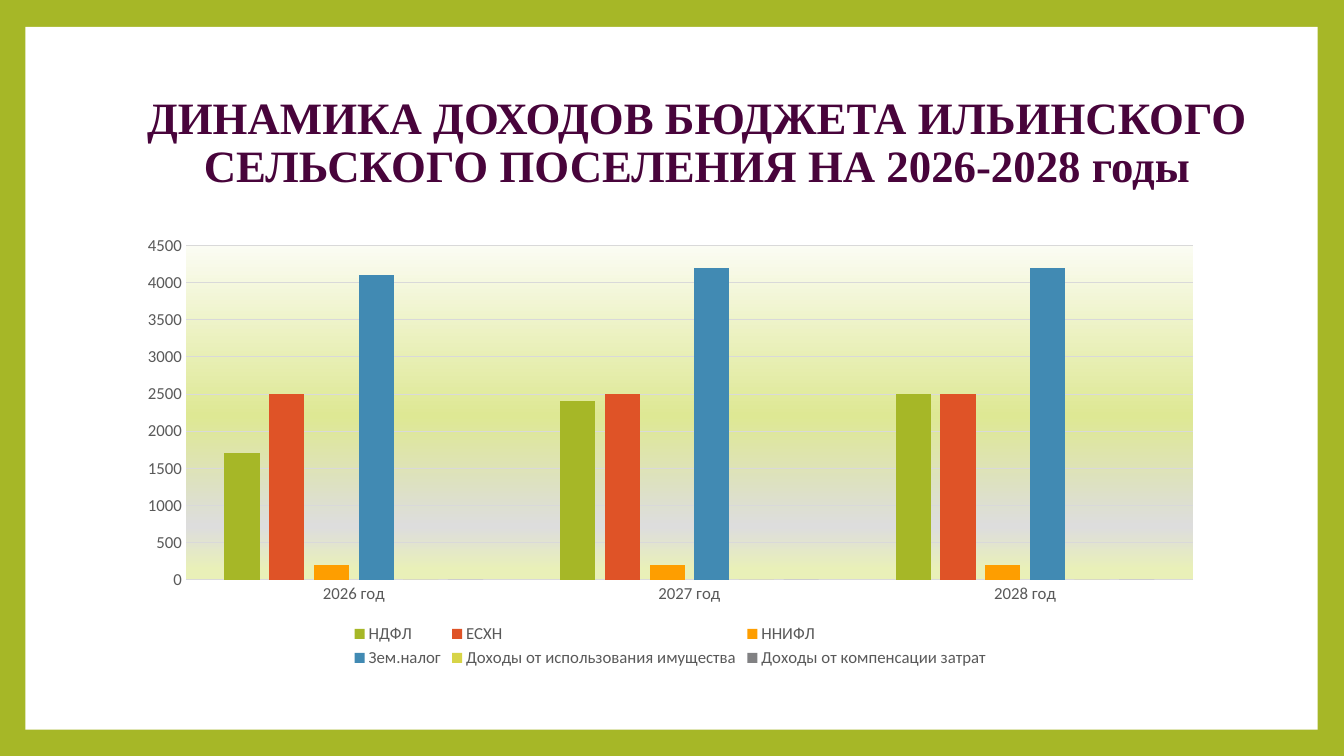
import pptx
import pptx.chart.data
import pptx.dml.color
import pptx.enum.chart
import pptx.enum.shapes
import pptx.enum.text
import pptx.oxml
import pptx.oxml.ns
import pptx.util
from pptx.util import Cm

YEARS = ["2026 год", "2027 год", "2028 год"]
INCOME = [
    ("НДФЛ", (1700, 2400, 2500), "A6B727"),
    ("ЕСХН", (2500, 2500, 2500), "DF5327"),
    ("ННИФЛ", (200, 200, 200), "FE9E00"),
    ("Зем.налог", (4100, 4200, 4200), "418AB3"),
    ("Доходы от использования имущества", (0, 0, 0), "D7D447"),
    ("Доходы от компенсации затрат", (0, 0, 0), "818183"),
]
PLOT_STOPS = [(0, "FBFCF3"), (51, "DEE894"), (84, "DDDDDD"), (97, "E9F0B8")]


def rgb(value):
    """Return the colour for a hex string."""
    return pptx.dml.color.RGBColor.from_string(value)


def style_font(font, name, size, color, bold=False):
    """Set the face, size, colour and weight of a font."""
    font.name = name
    font.size = pptx.util.Pt(size)
    font.color.rgb = rgb(color)
    font.bold = bold


def style_line(line, color):
    """Give a line the thin chart weight and a colour."""
    line.width = pptx.util.Pt(0.75)
    line.color.rgb = rgb(color)


def add_frame(s, left, top, width, height):
    """Fill the background green and lay the white panel in the box."""
    s.background.fill.solid()
    s.background.fill.fore_color.rgb = rgb("A6B727")
    sp = s.shapes.add_shape(
        pptx.enum.shapes.MSO_SHAPE.RECTANGLE, left, top, width, height)
    sp.shadow.inherit = False
    sp.fill.solid()
    sp.fill.fore_color.rgb = rgb("FFFFFF")
    sp.line.fill.background()


def add_title(s, text, left, top, width, height):
    """Write the centred title in the box."""
    tf = s.shapes.add_textbox(left, top, width, height).text_frame
    tf.word_wrap = True
    tf.vertical_anchor = pptx.enum.text.MSO_ANCHOR.MIDDLE
    tf.text = text
    p = tf.paragraphs[0]
    p.alignment = pptx.enum.text.PP_ALIGN.CENTER
    p.line_spacing = 0.9
    style_font(p.runs[0].font, "Times New Roman", 32, "48043B", True)


def fill_plot(chart, stops):
    """Fill the plot area with a gradient from top to bottom."""
    gs = "".join(
        f'<a:gs pos="{pos * 1000}"><a:srgbClr val="{color}"/></a:gs>'
        for pos, color in stops)
    xml = (f'<c:spPr {pptx.oxml.ns.nsdecls("c", "a")}><a:gradFill>'
           f'<a:gsLst>{gs}</a:gsLst><a:lin ang="5400000" scaled="0"/>'
           '</a:gradFill><a:ln><a:noFill/></a:ln></c:spPr>')
    plot_area = chart.plots[0]._element.getparent()
    plot_area.append(pptx.oxml.parse_xml(xml))


def add_income_chart(s, left, top, width, height):
    """Draw the clustered income columns in the box."""
    data = pptx.chart.data.CategoryChartData()
    data.categories = YEARS
    for name, values, _ in INCOME:
        data.add_series(name, values)
    chart = s.shapes.add_chart(
        pptx.enum.chart.XL_CHART_TYPE.COLUMN_CLUSTERED,
        left, top, width, height, data).chart
    style_font(chart.font, "Calibri", 10, "000000")
    chart.has_title = False
    chart.has_legend = True
    chart.legend.position = pptx.enum.chart.XL_LEGEND_POSITION.BOTTOM
    chart.legend.include_in_layout = False
    style_font(chart.legend.font, "Calibri", 12, "595959")

    plot = chart.plots[0]
    plot.gap_width = 219
    plot.overlap = -27
    plot.vary_by_categories = False
    for series, (_, _, color) in zip(plot.series, INCOME):
        series.format.fill.solid()
        series.format.fill.fore_color.rgb = rgb(color)

    for axis in (chart.category_axis, chart.value_axis):
        axis.major_tick_mark = pptx.enum.chart.XL_TICK_MARK.NONE
        axis.minor_tick_mark = pptx.enum.chart.XL_TICK_MARK.NONE
        style_font(axis.tick_labels.font, "Calibri", 12, "595959")
    style_line(chart.category_axis.format.line, "D9D9D9")
    chart.value_axis.format.line.fill.background()
    chart.value_axis.minimum_scale = 0
    chart.value_axis.maximum_scale = 4500
    chart.value_axis.major_unit = 500
    style_line(chart.value_axis.major_gridlines.format.line, "D9D9D9")
    fill_plot(chart, PLOT_STOPS)


def main():
    """Build the slide and save it."""
    prs = pptx.Presentation()
    prs.slide_width, prs.slide_height = Cm(33.87), Cm(19.05)
    s = prs.slides.add_slide(prs.slide_layouts[6])
    add_frame(s, Cm(0.64), Cm(0.68), Cm(32.57), Cm(17.71))
    add_title(
        s, "ДИНАМИКА ДОХОДОВ БЮДЖЕТА ИЛЬИНСКОГО СЕЛЬСКОГО ПОСЕЛЕНИЯ "
        "НА 2026-2028 годы", Cm(3.18), Cm(1.74), Cm(28.78), Cm(3.78))
    add_income_chart(s, Cm(3.18), Cm(5.71), Cm(27.43), Cm(11.22))
    prs.save("out.pptx")


if __name__ == "__main__":
    main()
